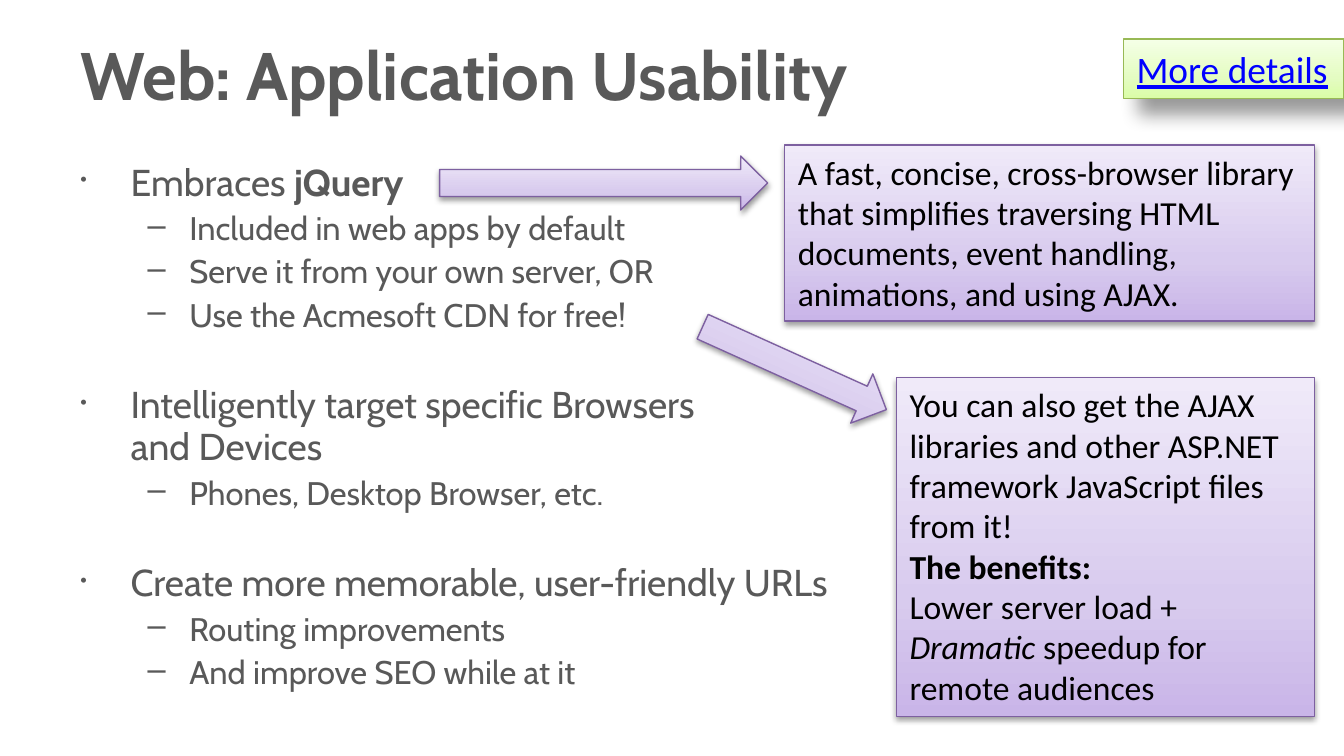
import copy

import lxml.etree
import pptx
import pptx.dml.color
import pptx.enum.shapes
import pptx.enum.text
import pptx.oxml.ns
import pptx.util

Cm, Pt = pptx.util.Cm, pptx.util.Pt
SHAPE = pptx.enum.shapes.MSO_SHAPE
qn = pptx.oxml.ns.qn

GREY, BLACK, BLUE = "595959", "000000", "0000FF"
PURPLE = {
    "stops": ("C9B5E8", "D8CBEE", "F0EAF9"), "border": "7D60A0",
    "shadow": {"blur": 3.1, "dist": 1.6, "angle": 90, "alpha": 38},
}
GREEN = {
    "stops": ("DAFDA7", "E4FCC2", "F5FFE7"), "border": "98B955",
    "shadow": {"blur": 10, "dist": 12, "angle": 45, "alpha": 40},
}
LEVELS = (
    {"indent": 0.95, "hanging": 0.95, "bullet": "•", "bullet_size": 52, "size": 20},
    {"indent": 2.06, "hanging": 0.79, "bullet": "–", "bullet_size": 100, "size": 17.5},
)
TOPICS = (
    ([("Embraces ", {}), ("jQuery", {"bold": True})],
     ["Included in web apps by default", "Serve it from your own server, OR",
      "Use the Acmesoft CDN for free!"]),
    ([("Intelligently target specific Browsers\nand Devices", {})],
     ["Phones, Desktop Browser, etc."]),
    ([("Create more memorable, user-friendly URLs", {})],
     ["Routing improvements", "And improve SEO while at it"]),
)
LIBRARY_NOTE = [[(
    "A fast, concise, cross-browser library that simplifies traversing HTML "
    "documents, event handling, animations, and using AJAX.", {})]]
CDN_NOTE = [
    [("You can also get the AJAX libraries and other ASP.NET framework "
      "JavaScript files from it!", {})],
    [("The benefits:\n", {"bold": True}), ("Lower server load +\n", {}),
     ("Dramatic ", {"italic": True}), ("speedup for remote audiences", {})],
]


def color(value):
    return pptx.dml.color.RGBColor.from_string(value)


def set_format(target, values):
    for name, value in values.items():
        setattr(target, name, value)


def place(part, box):
    set_format(part, dict(zip(("left", "top", "width", "height"), map(Cm, box))))


def write_runs(paragraph, runs, name, size, ink):
    for text, style in runs:
        for number, line in enumerate(text.split("\n")):
            if number:
                paragraph.add_line_break()
            if line:
                run = paragraph.add_run()
                run.text = line
                set_format(run.font, {"name": name, "size": Pt(size), **style})
                run.font.color.rgb = color(ink)


def next_paragraph(frame):
    first = frame.paragraphs[0]
    return frame.add_paragraph() if first.runs else first


def add_title(slide, box):
    title = slide.shapes.title
    place(title, box)
    set_format(title.text_frame, {
        "word_wrap": True, "vertical_anchor": pptx.enum.text.MSO_ANCHOR.MIDDLE})
    heading = title.text_frame.paragraphs[0]
    heading.alignment = pptx.enum.text.PP_ALIGN.LEFT
    write_runs(heading, [("Web: Application Usability", {"bold": True})], "Cabin", 36, GREY)


def add_bullet(frame, runs, level, space):
    look = LEVELS[level]
    paragraph = next_paragraph(frame)
    properties = paragraph._p.get_or_add_pPr()
    properties.set("marL", str(Cm(look["indent"])))
    properties.set("indent", str(-Cm(look["hanging"])))
    for tag, key, value in (
        ("a:buSzPct", "val", str(look["bullet_size"] * 1000)),
        ("a:buChar", "char", look["bullet"]),
    ):
        lxml.etree.SubElement(properties, qn(tag)).set(key, value)
    set_format(paragraph, {"level": level, "line_spacing": 0.94, "space_before": Pt(space)})
    write_runs(paragraph, runs, "Cabin", look["size"], GREY)


def add_topics(slide, box):
    frame = slide.shapes.add_textbox(*map(Cm, box)).text_frame
    frame.word_wrap = True
    for number, (topic, details) in enumerate(TOPICS):
        add_bullet(frame, topic, 0, 27 if number else 0)
        for detail in details:
            add_bullet(frame, [(detail, {})], 1, 3.5)


def add_panel(slide, box, kind, theme, rotation=0):
    panel = slide.shapes.add_shape(kind, *map(Cm, box))
    panel.rotation = rotation
    panel.fill.gradient()
    panel.fill.gradient_angle = 90
    properties = panel._element.spPr
    stop_list = properties.find(qn("a:gradFill")).find(qn("a:gsLst"))
    stop_list.append(copy.deepcopy(stop_list[-1]))
    for stop, position, tint in zip(panel.fill.gradient_stops, (0, 0.35, 1), theme["stops"]):
        stop.position = position
        stop.color.rgb = color(tint)
    panel.line.color.rgb = color(theme["border"])
    panel.line.width = Pt(0.75)
    panel.shadow.inherit = False
    shadow = theme["shadow"]
    outer = lxml.etree.SubElement(properties.find(qn("a:effectLst")), qn("a:outerShdw"), {
        "blurRad": str(Pt(shadow["blur"])), "dist": str(Pt(shadow["dist"])),
        "dir": str(shadow["angle"] * 60000), "rotWithShape": "0"})
    shade = lxml.etree.SubElement(outer, qn("a:srgbClr"), {"val": BLACK})
    lxml.etree.SubElement(shade, qn("a:alpha"), {"val": str(shadow["alpha"] * 1000)})
    return panel


def add_note(slide, box, paragraphs, theme=PURPLE, size=18, ink=BLACK, wrap=True):
    frame = add_panel(slide, box, SHAPE.RECTANGLE, theme).text_frame
    set_format(frame, {
        "word_wrap": wrap, "vertical_anchor": pptx.enum.text.MSO_ANCHOR.TOP})
    for runs in paragraphs:
        paragraph = next_paragraph(frame)
        paragraph.alignment = pptx.enum.text.PP_ALIGN.LEFT
        write_runs(paragraph, runs, "Calibri", size, ink)


def main():
    deck = pptx.Presentation()
    set_format(deck, {"slide_width": Cm(25.4), "slide_height": Cm(14.29)})
    slide = deck.slides.add_slide(deck.slide_layouts[5])
    add_title(slide, (1.27, 0.58, 22.86, 1.63))
    add_topics(slide, (1.27, 2.95, 22.86, 10.8))
    add_note(slide, (16.94, 7.14, 7.9, 6.4), CDN_NOTE)
    add_panel(slide, (13.11, 6.45, 3.81, 1.02), SHAPE.RIGHT_ARROW, PURPLE, 24.3)
    add_note(slide, (14.83, 2.74, 10.01, 3.33), LIBRARY_NOTE)
    add_panel(slide, (8.31, 2.95, 6.2, 1.02), SHAPE.RIGHT_ARROW, PURPLE)
    add_note(slide, (21.23, 0.74, 4.17, 1.12), [[("More details", {"underline": True})]],
             GREEN, 20, BLUE, False)
    deck.save("out.pptx")


if __name__ == "__main__":
    main()
